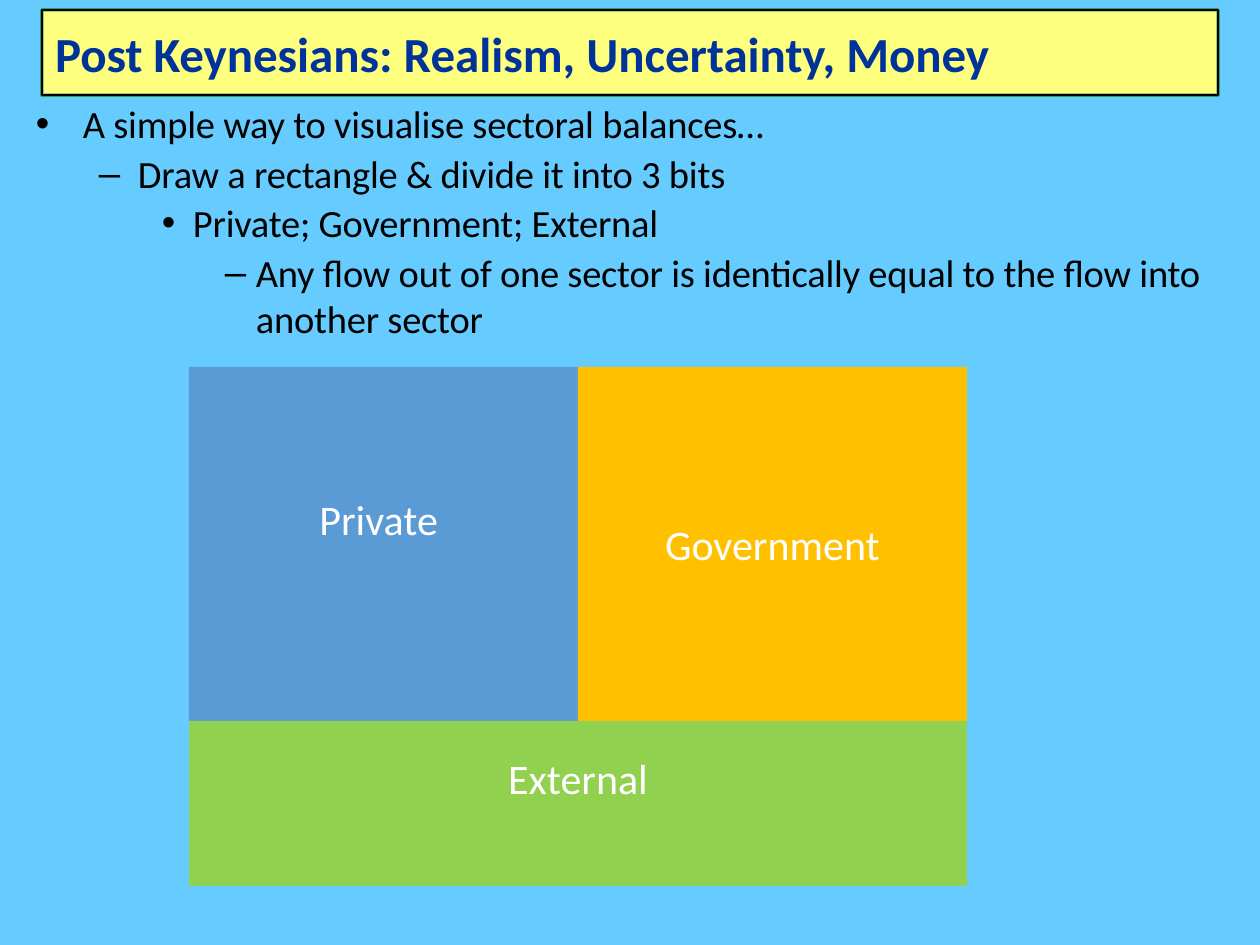
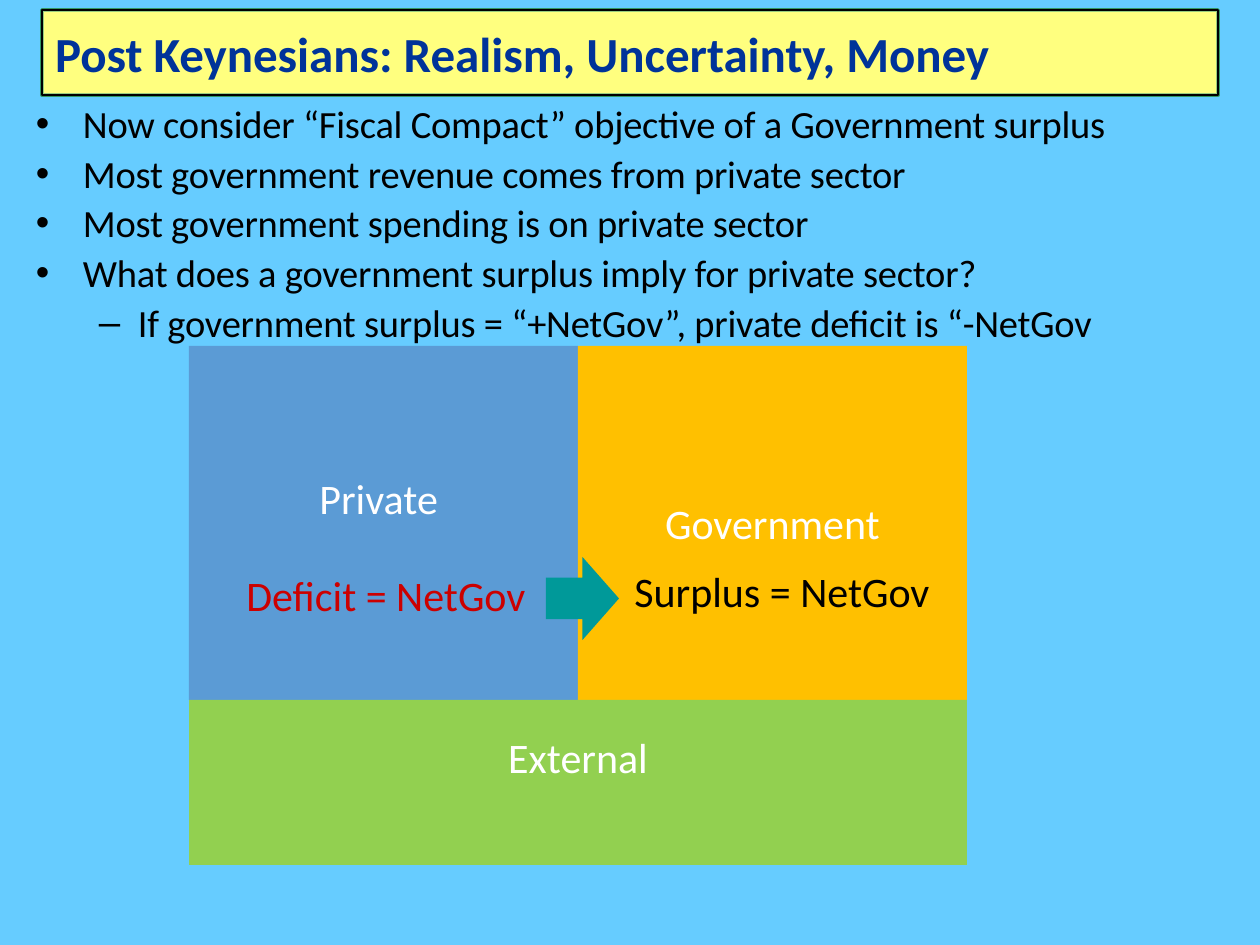
from dataclasses import dataclass

import pptx
import pptx.dml.color
import pptx.enum.shapes
import pptx.enum.text
import pptx.oxml.ns
import pptx.presentation
import pptx.shapes.autoshape
import pptx.slide
import pptx.text.text
import pptx.util
from lxml import etree

RGBColor = pptx.dml.color.RGBColor
Pt = pptx.util.Pt
qn = pptx.oxml.ns.qn
MSO_SHAPE = pptx.enum.shapes.MSO_SHAPE
ANCHOR = pptx.enum.text.MSO_ANCHOR
ALIGN = pptx.enum.text.PP_ALIGN
AUTO_SIZE = pptx.enum.text.MSO_AUTO_SIZE

SKY = RGBColor(0x66, 0xCC, 0xFF)
BAND_YELLOW = RGBColor(0xFF, 0xFF, 0x66)
BAND_GREEN = RGBColor(0x33, 0x99, 0x66)
TITLE_YELLOW = RGBColor(0xFF, 0xFF, 0x99)
NAVY = RGBColor(0x00, 0x33, 0x99)
BLACK = RGBColor(0x00, 0x00, 0x00)
WHITE = RGBColor(0xFF, 0xFF, 0xFF)
BLUE = RGBColor(0x5B, 0x9B, 0xD5)
AMBER = RGBColor(0xFF, 0xC0, 0x00)
GREEN = RGBColor(0x92, 0xD0, 0x50)
TEAL = RGBColor(0x00, 0x99, 0x99)
RED = RGBColor(0xCC, 0x00, 0x00)

FONT = "Calibri"
TITLE = "Post Keynesians: Realism, Uncertainty, Money"
TITLE_ONLY = 5
PX_PER_INCH = 126


def px(length: int) -> int:
    return round(length * 914400 / PX_PER_INCH)


@dataclass(frozen=True)
class Box:
    left: int
    top: int
    width: int
    height: int

    def emu(self) -> tuple[int, ...]:
        return tuple(px(n) for n in (self.left, self.top, self.width, self.height))


@dataclass(frozen=True)
class BulletLevel:
    margin: int
    hanging: int
    mark: str


@dataclass(frozen=True)
class Point:
    text: str
    level: int = 0


@dataclass(frozen=True)
class Sector:
    name: str
    box: Box
    colour: RGBColor
    lift: int = 0  # bottom inset that raises the name


@dataclass(frozen=True)
class Balance:
    text: str
    box: Box
    colour: RGBColor


TITLE_BOX = Box(42, 10, 1176, 85)
POINTS_BOX = Box(31, 94, 1207, 252)
LEVELS = (
    BulletLevel(47, 47, "•"),
    BulletLevel(102, 39, "–"),
    BulletLevel(157, 31, "•"),
    BulletLevel(220, 31, "–"),
)

DIAGRAM_LEFT, HALF_WIDTH = 189, 389
UPPER_HEIGHT, LOWER_HEIGHT = 354, 165
NAME_LIFT = 51

VISUALISE_POINTS = (
    Point("A simple way to visualise sectoral balances…"),
    Point("Draw a rectangle & divide it into 3 bits", 1),
    Point("Private; Government; External", 2),
    Point("Any flow out of one sector is identically equal to the flow into another sector", 3),
)
SURPLUS_POINTS = (
    Point("Now consider “Fiscal Compact” objective of a Government surplus"),
    Point("Most government revenue comes from private sector"),
    Point("Most government spending is on private sector"),
    Point("What does a government surplus imply for private sector?"),
    Point("If government surplus = “+NetGov”, private deficit is “-NetGov", 1),
)
FLOW_ARROW = Box(546, 557, 73, 83)
BALANCES = (
    Balance("Surplus = NetGov", Box(615, 559, 334, 63), BLACK),
    Balance("Deficit = NetGov", Box(227, 563, 318, 63), RED),
)


def format_runs(paragraph: pptx.text.text._Paragraph, size: int,
                colour: RGBColor, bold: bool = False) -> None:
    for run in paragraph.runs:
        run.font.name = FONT
        run.font.size = Pt(size)
        run.font.bold = bold
        run.font.color.rgb = colour


def set_insets(frame: pptx.text.text.TextFrame, side: int, top: int, bottom: int) -> None:
    frame.margin_left = frame.margin_right = px(side)
    frame.margin_top, frame.margin_bottom = px(top), px(bottom)


def add_filled(slide: pptx.slide.Slide, kind: MSO_SHAPE, box: Box,
               colour: RGBColor) -> pptx.shapes.autoshape.Shape:
    shape = slide.shapes.add_shape(kind, *box.emu())
    shape.shadow.inherit = False
    shape.fill.solid()
    shape.fill.fore_color.rgb = colour
    shape.line.fill.background()
    return shape


def add_title(slide: pptx.slide.Slide) -> None:
    """Lay the half-transparent title over a green-edged band."""
    band = add_filled(slide, MSO_SHAPE.RECTANGLE, TITLE_BOX, BAND_YELLOW)
    band.line.color.rgb = BAND_GREEN
    band.line.width = Pt(2)
    title = slide.shapes.title
    title._element.addprevious(band._element)

    title.left, title.top, title.width, title.height = TITLE_BOX.emu()
    title.fill.solid()
    title.fill.fore_color.rgb = TITLE_YELLOW
    tint = title._element.spPr.find(qn("a:solidFill"))[0]
    etree.SubElement(tint, qn("a:alpha"), val="50000")
    title.line.color.rgb = BLACK
    title.line.width = Pt(1)

    frame = title.text_frame
    frame.text = TITLE
    frame.auto_size = AUTO_SIZE.NONE
    frame.vertical_anchor = ANCHOR.MIDDLE
    set_insets(frame, 13, 6, 6)
    frame.paragraphs[0].alignment = ALIGN.LEFT
    format_runs(frame.paragraphs[0], 28, NAVY, bold=True)


def set_bullet(paragraph: pptx.text.text._Paragraph, level: BulletLevel) -> None:
    properties = paragraph._p.get_or_add_pPr()
    properties.set("marL", str(px(level.margin)))
    properties.set("indent", str(-px(level.hanging)))
    etree.SubElement(properties, qn("a:buFont"), typeface="Arial")
    etree.SubElement(properties, qn("a:buChar"), char=level.mark)


def add_points(slide: pptx.slide.Slide, points: tuple[Point, ...]) -> None:
    frame = slide.shapes.add_textbox(*POINTS_BOX.emu()).text_frame
    frame.word_wrap = True
    set_insets(frame, 5, 6, 6)
    frame.text = "\n".join(point.text for point in points)
    for paragraph, point in zip(frame.paragraphs, points):
        paragraph.level = point.level
        paragraph.space_before = Pt(2)
        set_bullet(paragraph, LEVELS[point.level])
        format_runs(paragraph, 22, BLACK)
        for run in paragraph.runs:
            run._r.get_or_add_rPr().set("spc", "-10")


def add_sectors(slide: pptx.slide.Slide, top: int) -> None:
    sectors = (
        Sector("Private ", Box(DIAGRAM_LEFT, top, HALF_WIDTH, UPPER_HEIGHT),
               BLUE, NAME_LIFT),
        Sector("Government", Box(DIAGRAM_LEFT + HALF_WIDTH, top, HALF_WIDTH, UPPER_HEIGHT),
               AMBER),
        Sector("External", Box(DIAGRAM_LEFT, top + UPPER_HEIGHT, 2 * HALF_WIDTH, LOWER_HEIGHT),
               GREEN, NAME_LIFT),
    )
    for sector in sectors:
        frame = add_filled(slide, MSO_SHAPE.RECTANGLE, sector.box, sector.colour).text_frame
        frame.text = sector.name
        frame.word_wrap = False
        frame.vertical_anchor = ANCHOR.MIDDLE
        set_insets(frame, 0, 0, sector.lift)
        frame.paragraphs[0].alignment = ALIGN.CENTER
        format_runs(frame.paragraphs[0], 24, WHITE)


def add_balance(slide: pptx.slide.Slide, balance: Balance) -> None:
    frame = slide.shapes.add_textbox(*balance.box.emu()).text_frame
    frame.text = balance.text
    frame.word_wrap = False
    frame.auto_size = AUTO_SIZE.SHAPE_TO_FIT_TEXT
    frame.paragraphs[0].alignment = ALIGN.CENTER
    format_runs(frame.paragraphs[0], 24, balance.colour)


def add_sector_slide(deck: pptx.presentation.Presentation, points: tuple[Point, ...],
                     diagram_top: int) -> pptx.slide.Slide:
    slide = deck.slides.add_slide(deck.slide_layouts[TITLE_ONLY])
    add_title(slide)
    add_points(slide, points)
    add_sectors(slide, diagram_top)
    return slide


def main() -> None:
    deck = pptx.Presentation()
    deck.slide_width, deck.slide_height = px(1260), px(945)
    backdrop = deck.slide_master.background.fill
    backdrop.solid()
    backdrop.fore_color.rgb = SKY

    add_sector_slide(deck, VISUALISE_POINTS, 367)
    surplus = add_sector_slide(deck, SURPLUS_POINTS, 346)
    add_filled(surplus, MSO_SHAPE.RIGHT_ARROW, FLOW_ARROW, TEAL)
    for balance in BALANCES:
        add_balance(surplus, balance)

    deck.save("out.pptx")


if __name__ == "__main__":
    main()
